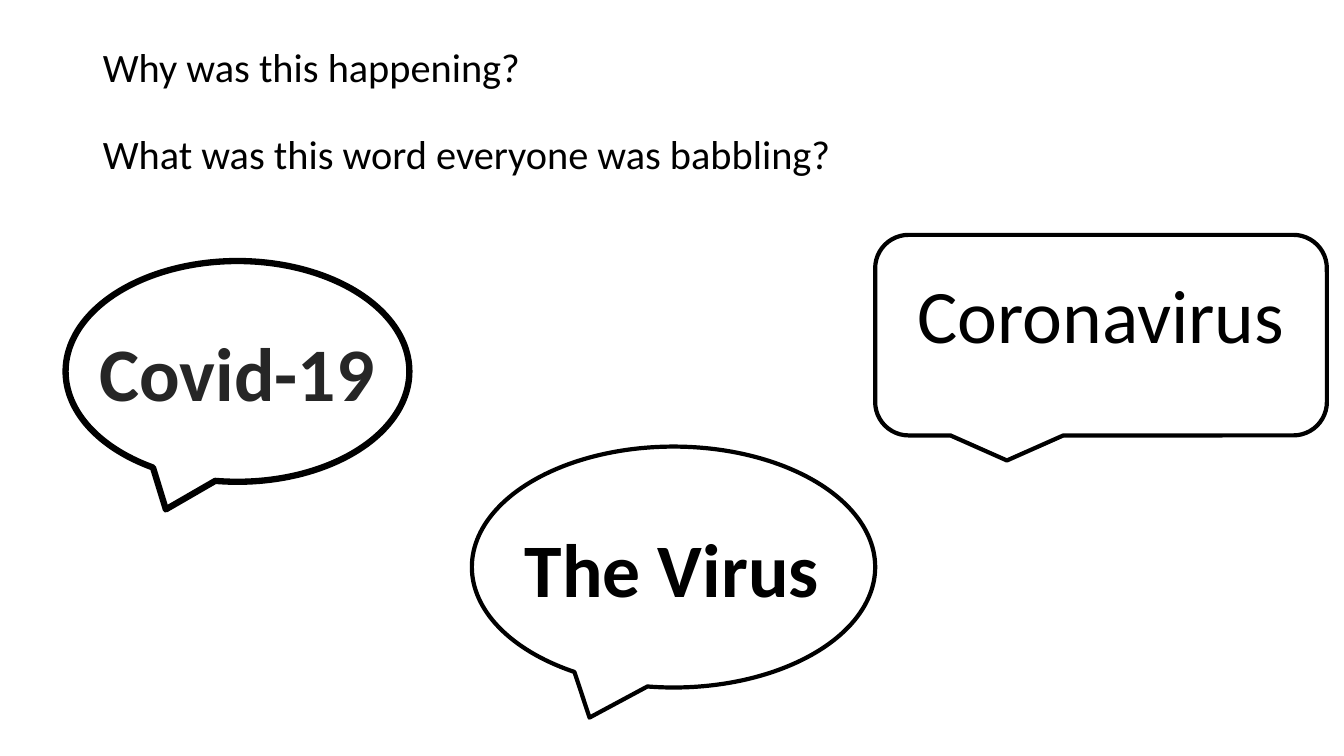
from dataclasses import dataclass
from typing import Optional

from pptx import Presentation
from pptx.dml.color import RGBColor
from pptx.enum.shapes import MSO_SHAPE
from pptx.enum.text import MSO_ANCHOR, MSO_AUTO_SIZE, PP_ALIGN
from pptx.util import Inches, Pt

OVAL = MSO_SHAPE.OVAL_CALLOUT
ROUNDED = MSO_SHAPE.ROUNDED_RECTANGULAR_CALLOUT
MIDDLE = MSO_ANCHOR.MIDDLE
FIXED = MSO_AUTO_SIZE.NONE
GROW = MSO_AUTO_SIZE.SHAPE_TO_FIT_TEXT
LEFT = PP_ALIGN.LEFT
CENTER = PP_ALIGN.CENTER

WIDTH, HEIGHT = Inches(13.33), Inches(7.5)
FONT = "Calibri"
BLACK, CHARCOAL, WHITE = "000000", "262626", "FFFFFF"
TITLE_ONLY = 5
WORD_HEIGHT = 13.47
QUESTIONS = ["Why was this happening?", "What was this word everyone was babbling?"]


@dataclass
class Area:
    left: float
    top: float
    width: float
    height: float

    def emu(self) -> tuple[int, int, int, int]:
        return (int(WIDTH * self.left / 100), int(HEIGHT * self.top / 100),
                int(WIDTH * self.width / 100), int(HEIGHT * self.height / 100))


@dataclass
class Bubble:
    word: str
    outline: MSO_SHAPE
    area: Area
    word_area: Area
    border: float = 3
    fill: Optional[str] = WHITE
    color: str = BLACK
    bold: bool = True


BUBBLES = [
    Bubble("Covid-19", OVAL, Area(4.88, 34.53, 25.58, 29.2),
           Area(6.53, 42.4, 22.21, WORD_HEIGHT), border=4.5, fill=None, color=CHARCOAL),
    Bubble("Coronavirus", ROUNDED, Area(65.12, 31.07, 33.61, 26.53),
           Area(67.37, 34.8, 29.11, WORD_HEIGHT), bold=False),
    Bubble("The Virus", OVAL, Area(35.11, 59.07, 30.01, 31.87),
           Area(38.18, 68.4, 23.63, WORD_HEIGHT)),
]


def rgb(value: str) -> RGBColor:
    return RGBColor.from_string(value)


def write(frame, lines: list[str], *, size: float, color: str = BLACK, bold: bool = False,
          align: PP_ALIGN = LEFT, spacing: float = 1, gap: float = 0) -> None:
    for index, line in enumerate(lines):
        paragraph = frame.paragraphs[0] if index == 0 else frame.add_paragraph()
        paragraph.alignment = align
        paragraph.line_spacing = spacing
        paragraph.space_before = Pt(gap if index else 0)
        run = paragraph.add_run()
        run.text = line
        run.font.name = FONT
        run.font.size = Pt(size)
        run.font.bold = bold
        run.font.color.rgb = rgb(color)


def add_questions(slide) -> None:
    title = slide.shapes.title
    title.left, title.top, title.width, title.height = Area(6.9, 5.33, 86.27, 19.33).emu()
    frame = title.text_frame
    frame.auto_size = FIXED
    frame.word_wrap = True
    frame.vertical_anchor = MIDDLE
    write(frame, QUESTIONS, size=28.8, spacing=0.9, gap=31)


def add_bubble(slide, bubble: Bubble) -> None:
    callout = slide.shapes.add_shape(bubble.outline, *bubble.area.emu())
    callout.shadow.inherit = False
    callout.line.color.rgb = rgb(BLACK)
    callout.line.width = Pt(bubble.border)
    if bubble.fill:
        callout.fill.solid()
        callout.fill.fore_color.rgb = rgb(bubble.fill)
    else:
        callout.fill.background()
    frame = slide.shapes.add_textbox(*bubble.word_area.emu()).text_frame
    frame.word_wrap = False
    frame.auto_size = GROW
    write(frame, [bubble.word], size=54, color=bubble.color, bold=bubble.bold, align=CENTER)


def main() -> None:
    deck = Presentation()
    deck.slide_width, deck.slide_height = WIDTH, HEIGHT
    slide = deck.slides.add_slide(deck.slide_layouts[TITLE_ONLY])
    add_questions(slide)
    for bubble in BUBBLES:
        add_bubble(slide, bubble)
    deck.save("out.pptx")


if __name__ == "__main__":
    main()
